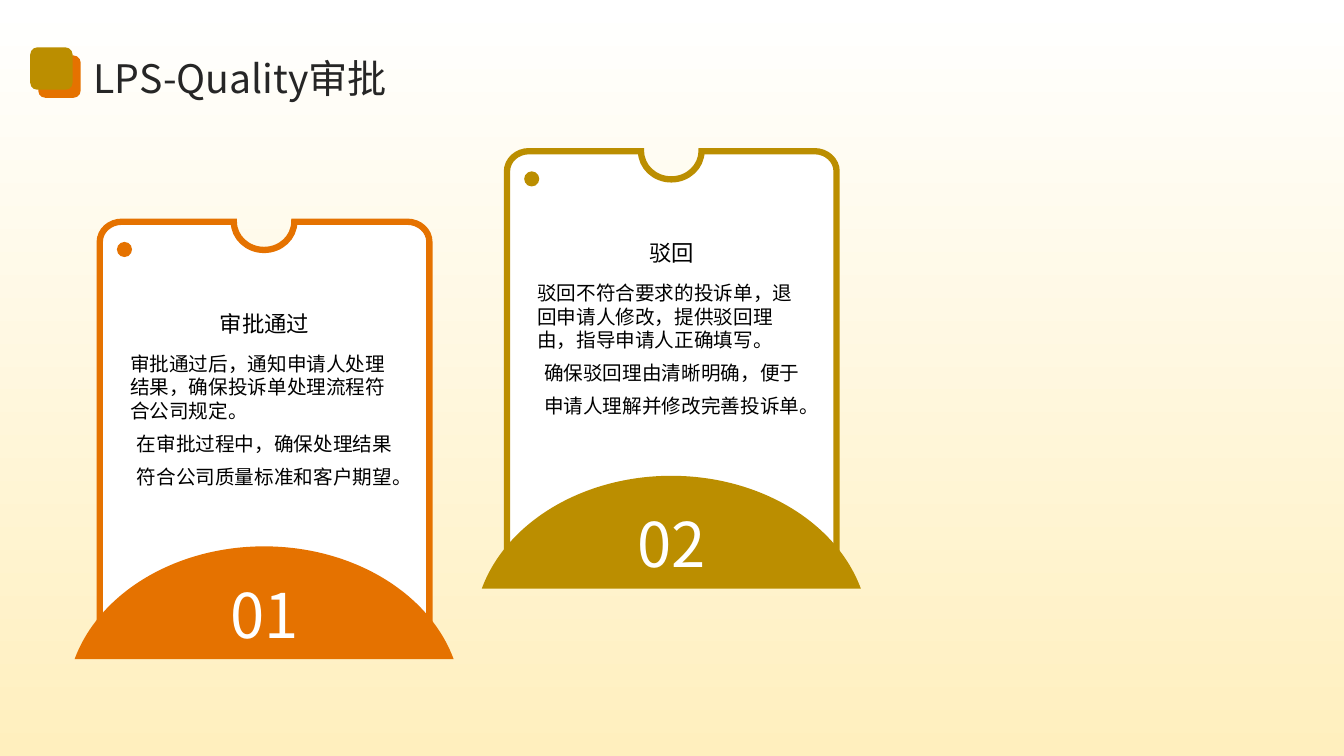
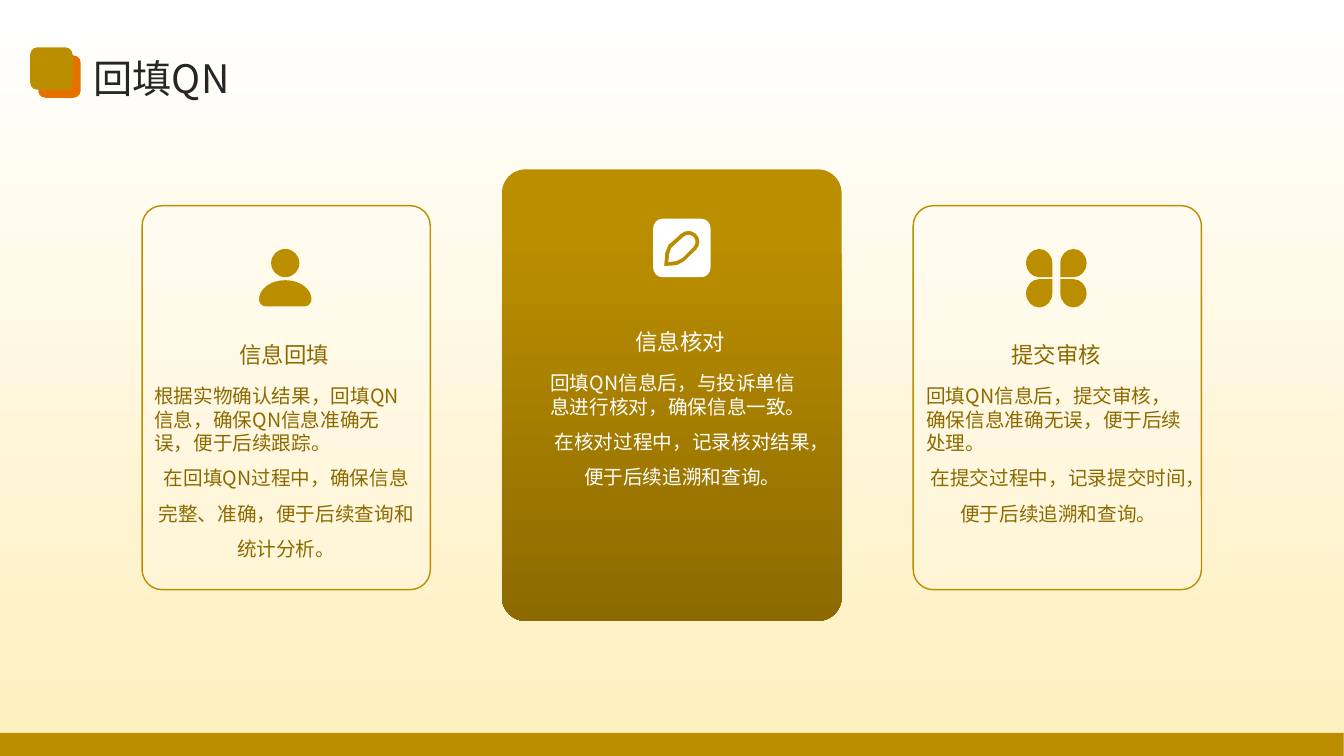
from math import asin, ceil, cos, degrees, radians, sin, tan

from lxml.etree import Element, SubElement
from pptx import Presentation
from pptx.dml.color import RGBColor
from pptx.enum.shapes import MSO_SHAPE
from pptx.enum.text import MSO_ANCHOR, PP_ALIGN
from pptx.oxml.ns import qn
from pptx.util import Inches, Pt

SCALE = 9144  # EMU in one px, 100 px to the inch
WIDTH, HEIGHT = 1333, 750
FONT = "Noto Sans CJK SC"
COLORS = {
    "white": "FFFFFF",
    "cream": "FFEFBE",
    "gold": "BB8E00",
    "brown": "8C6A00",
    "orange": "E57200",
    "black": "000000",
    "title": "262626",
}


def add_figure(slide, figure, box=None, fill=None, line=None, line_width=1):
    """Draw a preset shape in a box, or an outline of points and
    arcs (center x, center y, radius x, radius y, start, end).
    A fill is a colour name or a list of gradient stops."""
    if box:
        shape = slide.shapes.add_shape(figure, *[n * SCALE for n in box])
    else:
        builder, segments = None, []
        for contour in figure:
            steps = []  # each step is a list of control points and an end point
            for item in contour:
                if len(item) == 2:
                    steps.append([item])
                    continue
                x, y, radius_x, radius_y, start, end = item
                pieces = ceil(abs(end - start) / 90)
                turn = radians(end - start) / pieces
                pull = 4 / 3 * tan(turn / 4)
                for piece in range(pieces + 1):
                    angle = radians(start) + turn * piece
                    before = angle - turn
                    unit = [(cos(angle), sin(angle))]
                    if piece:
                        unit = [
                            (cos(before) - pull * sin(before), sin(before) + pull * cos(before)),
                            (cos(angle) + pull * sin(angle), sin(angle) - pull * cos(angle)),
                        ] + unit
                    steps.append([(x + radius_x * u, y + radius_y * v) for u, v in unit])
            steps = [[(round(x * SCALE), round(y * SCALE)) for x, y in step] for step in steps]
            if builder is None:
                builder = slide.shapes.build_freeform(*steps[0][-1])
            else:
                builder.move_to(*steps[0][-1])
            builder.add_line_segments([step[-1] for step in steps[1:]], close=True)
            segments += steps[1:]
        shape = builder.convert_to_shape()
        # Bend the segments that belong to arcs
        for segment, step in zip(list(shape._element.iter(qn("a:lnTo"))), segments):
            if len(step) == 3:
                segment.tag = qn("a:cubicBezTo")
                for index, (x, y) in enumerate(step[:2]):
                    control = Element(qn("a:pt"), x=str(x - shape.left), y=str(y - shape.top))
                    segment.insert(index, control)
    shape.shadow.inherit = False
    if isinstance(fill, str):
        shape.fill.solid()
        shape.fill.fore_color.rgb = RGBColor.from_string(COLORS[fill])
    else:
        shape.fill.gradient()
        shape.fill.gradient_angle = 270
        for stop, (position, color) in zip(shape.fill.gradient_stops, fill):
            stop.position = position
            stop.color.rgb = RGBColor.from_string(COLORS[color])
    if line:
        shape.line.color.rgb = RGBColor.from_string(COLORS[line])
        shape.line.width = Pt(line_width)
        SubElement(shape._element.spPr.find(qn("a:ln")), qn("a:miter")).set("lim", "800000")
    else:
        shape.line.fill.background()
    return shape


def add_text(slide, box, text, size, color, spacing,
             anchor=MSO_ANCHOR.MIDDLE, alignment=PP_ALIGN.CENTER):
    frame = slide.shapes.add_textbox(*[n * SCALE for n in box]).text_frame
    frame.word_wrap = True
    frame.vertical_anchor = anchor
    frame.margin_left = frame.margin_right = frame.margin_top = frame.margin_bottom = 0
    paragraph = frame.paragraphs[0]
    paragraph.alignment = alignment
    paragraph.line_spacing = spacing
    run = paragraph.add_run()
    run.text = text
    run.font.size = Pt(size)
    run.font.color.rgb = RGBColor.from_string(COLORS[color])
    run.font.name = FONT
    SubElement(run.font._element, qn("a:ea")).set("typeface", FONT)


presentation = Presentation()
presentation.slide_width = Inches(40 / 3)
presentation.slide_height = Inches(7.5)

# Shared background, title and title mark
slides = []
for title in ("LPS-Quality审批", "回填QN"):
    slide = presentation.slides.add_slide(presentation.slide_layouts[6])
    add_figure(slide, MSO_SHAPE.FLOWCHART_PROCESS, (0, 0, WIDTH, HEIGHT),
               [(0, "white"), (1, "cream")])
    add_text(slide, (93, 49, 1167, 51), title, 28, "title", 1.1, alignment=PP_ALIGN.LEFT)
    for left, top, color in ((38, 55, "orange"), (30, 47, "gold")):
        add_figure(slide, MSO_SHAPE.ROUNDED_RECTANGLE, (left, top, 42, 42), color)
    slides.append(slide)
approval_slide, backfill_slide = slides

# Slide 1: two ticket cards with a numbered dome
tickets = [
    (99, 220, "orange", "01", "审批通过",
     "审批通过后，通知申请人处理结果，确保投诉单处理流程符合公司规定。\n"
     "在审批过程中，确保处理结果符合公司质量标准和客户期望。"),
    (503, 150, "gold", "02", "驳回",
     "驳回不符合要求的投诉单，退回申请人修改，提供驳回理由，指导申请人正确填写。\n"
     "确保驳回理由清晰明确，便于申请人理解并修改完善投诉单。"),
]
ticket_width, ticket_height, corner_x, corner_y = 327, 417, 22, 20
dome_radius_x, dome_radius_y, dome_height = 196, 156, 112
dome_angle = degrees(asin(1 - dome_height / dome_radius_y))
for left, top, color, number, heading, body in tickets:
    center = left + 163
    inner_left, inner_right = left + corner_x, left + ticket_width - corner_x
    inner_top, inner_bottom = top + corner_y, top + ticket_height - corner_y
    add_figure(approval_slide, [[
        (inner_left, inner_top, corner_x, corner_y, 180, 270),
        (center, top, 30, 28, 180, 0),
        (inner_right, inner_top, corner_x, corner_y, 270, 360),
        (inner_right, inner_bottom, corner_x, corner_y, 0, 90),
        (inner_left, inner_bottom, corner_x, corner_y, 90, 180),
    ]], fill="white", line=color, line_width=4.5)
    add_figure(approval_slide, [[
        (center, top + 322 + dome_radius_y, dome_radius_x, dome_radius_y,
         180 + dome_angle, 360 - dome_angle),
    ]], fill=color)
    add_text(approval_slide, (left + 30, top + 129, 267, 189), body, 14, "black", 1.4,
             MSO_ANCHOR.TOP)
    add_text(approval_slide, (left + 30, top + 54, 267, 60), heading, 16, "black", 1.1,
             MSO_ANCHOR.BOTTOM)
    add_text(approval_slide, (left + 75, top + 355, 177, 60), number, 44, "white", 1.1)
    add_figure(approval_slide, MSO_SHAPE.OVAL, (left + 17, top + 20, 15, 15), color)

# Slide 2: footer band
add_figure(backfill_slide, MSO_SHAPE.RECTANGLE, (0, 727, WIDTH, 23), "gold")

# Slide 2: three step cards
steps = [
    ((141, 204, 286, 381), 150, 317, "brown", "信息回填",
     "根据实物确认结果，回填QN信息，确保QN信息准确无误，便于后续跟踪。\n"
     "在回填QN过程中，确保信息完整、准确，便于后续查询和统计分析。"),
    ((498, 168, 337, 448), 543, 304, "white", "信息核对",
     "回填QN信息后，与投诉单信息进行核对，确保信息一致。\n"
     "在核对过程中，记录核对结果，便于后续追溯和查询。"),
    ((906, 204, 286, 381), 916, 317, "brown", "提交审核",
     "回填QN信息后，提交审核，确保信息准确无误，便于后续处理。\n"
     "在提交过程中，记录提交时间，便于后续追溯和查询。"),
]
for box, left, top, color, heading, body in steps:
    if color == "white":
        card = add_figure(backfill_slide, MSO_SHAPE.ROUNDED_RECTANGLE, box,
                          [(0.15, "gold"), (1, "brown")])
    else:
        card = add_figure(backfill_slide, MSO_SHAPE.ROUNDED_RECTANGLE, box, "white", "gold")
        fill_color = card._element.spPr.find(qn("a:solidFill")).find(qn("a:srgbClr"))
        SubElement(fill_color, qn("a:alpha")).set("val", "20000")
    card.adjustments[0] = 0.07
    add_text(backfill_slide, (left, top, 264, 56), heading, 16, color, 1.5)
    add_text(backfill_slide, (left + 3, top + 64, 262, 185), body, 14, color, 1.5,
             MSO_ANCHOR.TOP)

# Person icon
add_figure(backfill_slide, [
    [(283, 261, 14, 14, 0, 360)],
    [(283, 297, 26, 19, 180, 360), (302, 297, 7, 7, 0, 90), (264, 297, 7, 7, 90, 180)],
], fill="gold")

# Pencil icon: a rounded tile with the pencil line cut out
add_figure(backfill_slide, [
    [(683, 240, 7, 7, 225, 405), (677, 256), (671, 259), (663, 260), (664, 252), (666, 246)],
    [(683, 240, 11, 11, 225, 405), (679, 259), (672, 263), (659, 264), (660, 251), (663, 243)],
    [(657, 227, 9, 10, 180, 270), (696, 227, 9, 10, 270, 360),
     (696, 265, 9, 10, 0, 90), (657, 265, 9, 10, 90, 180)],
], fill="white")

# Four-petal icon: each petal is an ellipse with a square inner corner
petals = []
for side_x, side_y, start in ((-1, -1, 90), (1, -1, 180), (1, 1, 270), (-1, 1, 0)):
    x, y = 1048 + side_x * 17, 276 + side_y * 15
    petals.append([(x, y, 13, 14, start, start + 270), (x - side_x * 13, y - side_y * 14)])
add_figure(backfill_slide, petals, fill="gold")

presentation.save("out.pptx")
